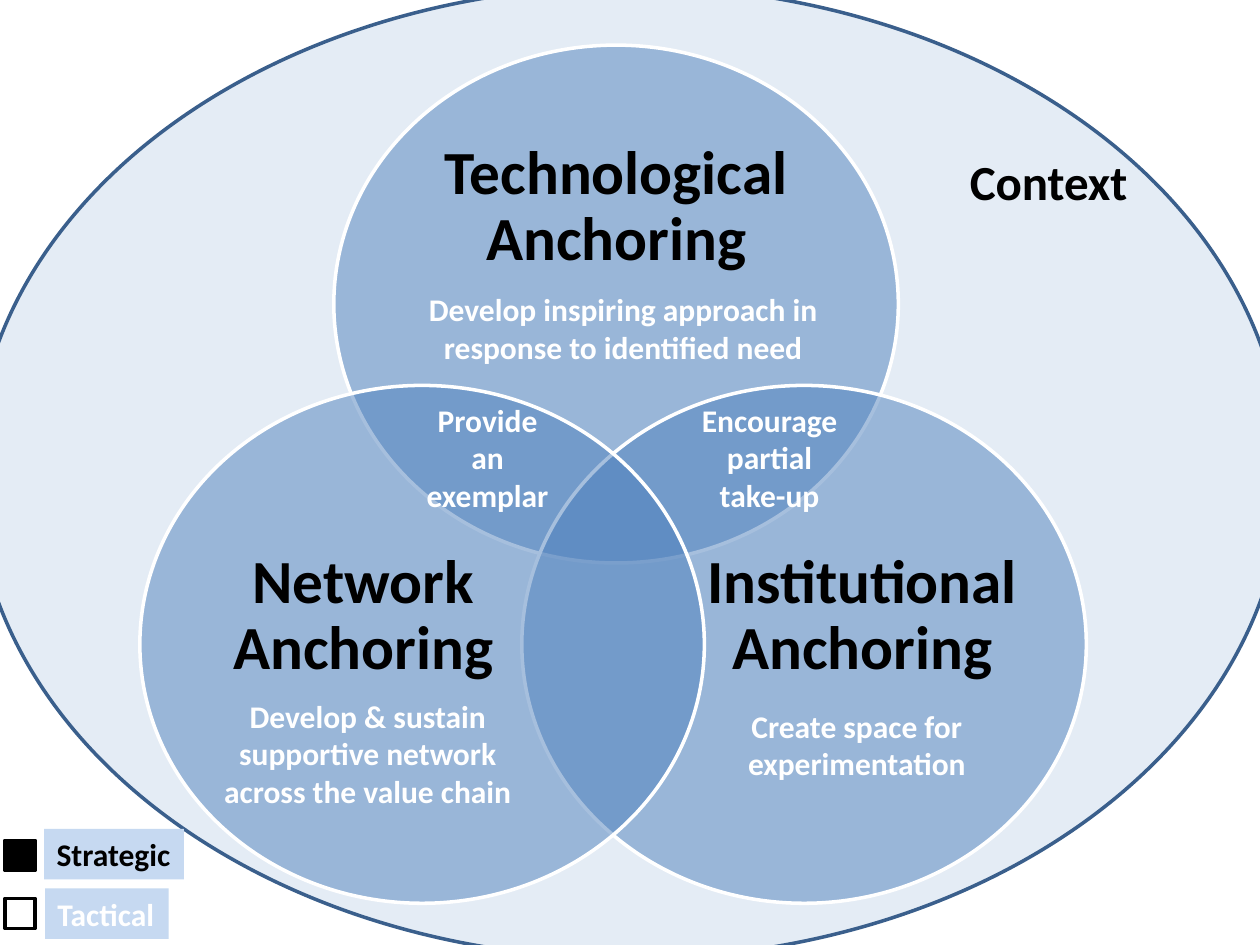
from lxml.etree import SubElement
from pptx import Presentation
from pptx.dml.color import RGBColor
from pptx.enum.shapes import MSO_SHAPE
from pptx.enum.text import MSO_ANCHOR, MSO_AUTO_SIZE, PP_ALIGN
from pptx.oxml.ns import qn
from pptx.util import Cm, Pt


def paint(shape, color, opacity=100, line=None):
    shape.shadow.inherit = False
    shape.fill.solid()
    shape.fill.fore_color.rgb = RGBColor.from_string(color)
    if opacity < 100:
        tint = shape.fill._xPr.find(qn("a:solidFill"))[0]
        SubElement(tint, qn("a:alpha")).set("val", str(opacity * 1000))
    if line:
        shape.line.color.rgb = RGBColor.from_string(line)
        shape.line.width = Pt(2)
    else:
        shape.line.fill.background()


def write(box, text, size, color, align, frame_format, spacing=1.0):
    for name, value in frame_format.items():
        setattr(box.text_frame, name, value)
    para = box.text_frame.paragraphs[0]
    para.text = text
    para.alignment = align
    para.line_spacing = spacing
    font_format = {"name": "Calibri", "size": Pt(size), "bold": True}
    for span in para.runs:
        for name, value in font_format.items():
            setattr(span.font, name, value)
        span.font.color.rgb = RGBColor.from_string(color)


BLACK, WHITE, BLUE, PALE = "000000", "FFFFFF", "4F81BD", "C6D9F1"
title_format = {
    "word_wrap": True,
    "vertical_anchor": MSO_ANCHOR.MIDDLE,
    "margin_left": 0,
    "margin_right": 0,
    "margin_top": 0,
    "margin_bottom": Cm(1.8),
}
label_format = {
    "word_wrap": False,
    "auto_size": MSO_AUTO_SIZE.SHAPE_TO_FIT_TEXT,
    "vertical_anchor": MSO_ANCHOR.TOP,
}

deck = Presentation()
deck.slide_width, deck.slide_height = Cm(25.4), Cm(19.05)
page = deck.slides.add_slide(deck.slide_layouts[6])

context = page.shapes.add_shape(
    MSO_SHAPE.OVAL, Cm(-0.51), Cm(-0.28), Cm(26.39), Cm(19.61))
paint(context, BLUE, 15, "3A5F8C")

venn = page.shapes.add_group_shape()
anchorings = [
    ("Technological", (6.73, 0.91), (8.26, 2.74, 8.33, 4.7)),
    ("Institutional", (10.52, 7.77), (13.97, 10.46, 6.83, 5.74)),
    ("Network", (2.82, 7.77), (3.91, 10.46, 6.83, 5.74)),
]
for kind, corner, area in anchorings:
    circle = venn.shapes.add_shape(
        MSO_SHAPE.OVAL, *map(Cm, corner), Cm(11.38), Cm(10.44))
    paint(circle, BLUE, 50, WHITE)
    title = venn.shapes.add_textbox(*map(Cm, area))
    write(title, f"{kind}\vAnchoring", 35, BLACK, PP_ALIGN.CENTER, title_format, 0.9)

captions = [
    ("Develop inspiring approach in\vresponse to identified need", (8.36, 5.72, 8.41, 1.8)),
    ("Create space for\vexperimentation", (14.81, 14.12, 4.93, 1.8)),
    ("Develop & sustain\vsupportive network\vacross the value chain", (4.24, 13.92, 6.35, 2.57)),
    ("Provide\van\vexemplar", (8.33, 7.95, 3, 2.57)),
    ("Encourage\vpartial\vtake-up", (13.89, 7.95, 3.25, 2.57)),
]
for text, area in captions:
    caption = page.shapes.add_textbox(*map(Cm, area))
    write(caption, text, 18, WHITE, PP_ALIGN.CENTER, label_format)

context_label = page.shapes.add_textbox(Cm(19.3), Cm(2.92), Cm(3.73), Cm(1.45))
write(context_label, "Context", 28, BLACK, PP_ALIGN.LEFT, label_format)

legend = [
    ("Strategic", BLACK, 16.94, (0.89, 16.71, 2.82, 1.02)),
    ("Tactical", WHITE, 18.11, (0.91, 17.91, 2.49, 1.02)),
]
for text, color, top, area in legend:
    swatch = page.shapes.add_shape(
        MSO_SHAPE.RECTANGLE, Cm(0.1), Cm(top), Cm(0.61), Cm(0.61))
    paint(swatch, color, line=BLACK)
    label = page.shapes.add_shape(MSO_SHAPE.RECTANGLE, *map(Cm, area))
    paint(label, PALE)
    write(label, text, 18, color, PP_ALIGN.LEFT, label_format)

deck.save("out.pptx")
